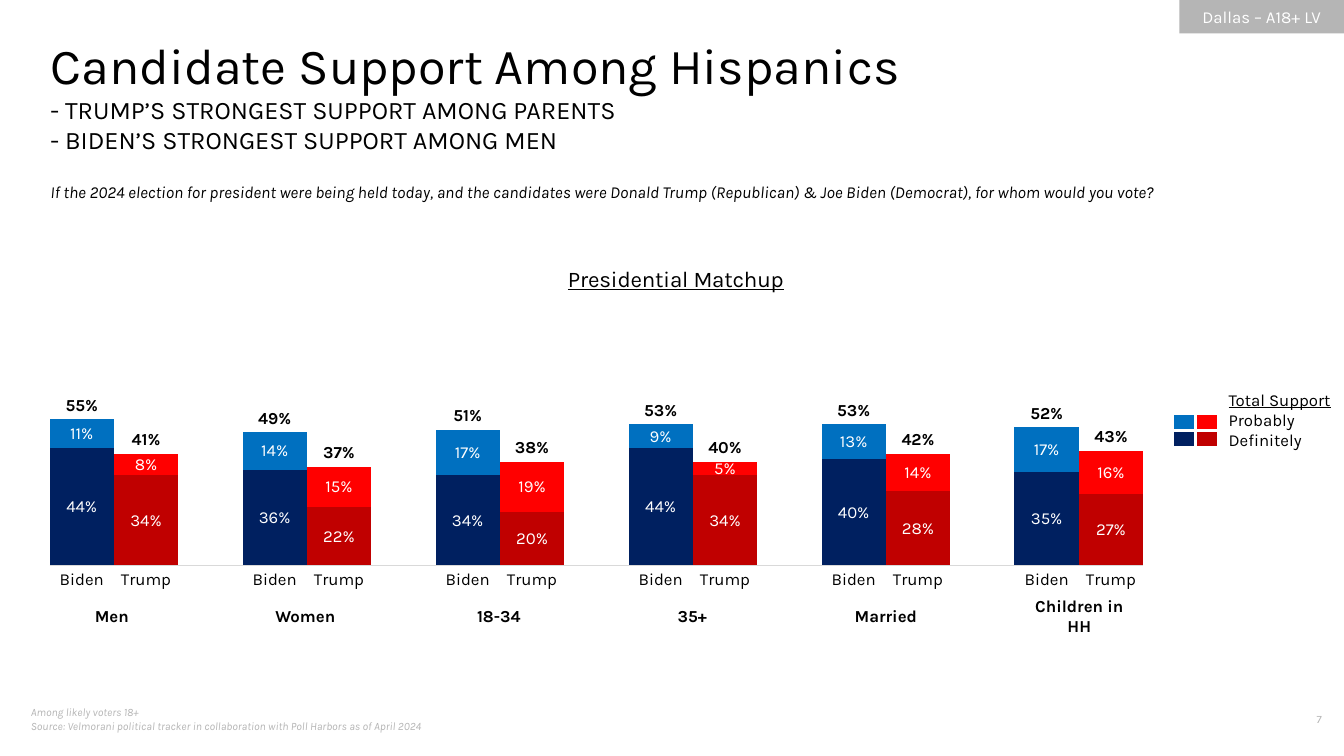
from lxml import etree
from pptx import Presentation
from pptx.chart.data import CategoryChartData
from pptx.dml.color import RGBColor
from pptx.enum.chart import XL_CHART_TYPE, XL_LABEL_POSITION, XL_TICK_MARK
from pptx.enum.shapes import MSO_SHAPE
from pptx.enum.text import MSO_ANCHOR, PP_ALIGN
from pptx.oxml import parse_xml
from pptx.oxml.ns import nsdecls, qn
from pptx.util import Pt

LEFT, CENTER, RIGHT = PP_ALIGN.LEFT, PP_ALIGN.CENTER, PP_ALIGN.RIGHT
TOP, MIDDLE = MSO_ANCHOR.TOP, MSO_ANCHOR.MIDDLE
STACKED, NO_TICK = XL_CHART_TYPE.COLUMN_STACKED, XL_TICK_MARK.NONE
LABEL_CENTER, LABEL_BASE = XL_LABEL_POSITION.CENTER, XL_LABEL_POSITION.INSIDE_BASE

FONT = "Karla"
COLORS = {
    "black": "000000", "white": "FFFFFF", "gray": "B5B5B5", "axis": "D9D9D9",
    "biden_definitely": "002060", "trump_definitely": "C00000",
    "biden_probably": "0070C0", "trump_probably": "FF0000",
}

AUDIENCE = "Dallas – A18+ LV"
HEADING = [
    ("Candidate Support Among Hispanics", {"size": 36}),
    ("- TRUMP’S STRONGEST SUPPORT AMONG PARENTS", {"size": 18}),
    ("- BIDEN’S STRONGEST SUPPORT AMONG MEN", {"size": 18}),
]
QUESTION = ("If the 2024 election for president were being held today, and the candidates were "
            "Donald Trump (Republican) & Joe Biden (Democrat), for whom would you vote?")
CHART_TITLE = "Presidential Matchup"
CANDIDATES = ("Biden", "Trump")
LEVELS = ("Definitely", "Probably", "Total Support")
# Group: (Biden, Trump) shares, each as definitely, probably, total
SUPPORT = {
    "Men": ((0.44, 0.11, 0.55), (0.34, 0.08, 0.41)),
    "Women": ((0.36, 0.14, 0.49), (0.22, 0.15, 0.37)),
    "18-34": ((0.34, 0.17, 0.51), (0.2, 0.19, 0.38)),
    "35+": ((0.44, 0.09, 0.53), (0.34, 0.05, 0.4)),
    "Married": ((0.4, 0.13, 0.53), (0.28, 0.14, 0.42)),
    "Children in HH": ((0.35, 0.17, 0.52), (0.27, 0.16, 0.43)),
}
FOOTNOTES = [
    "Among likely voters 18+",
    "Source: Velmorani political tracker in collaboration with Poll Harbors as of April 2024",
]
PAGE = "7"

BAR = 46.08
NO_TABLE_STYLE = "{2D5ABB26-0587-4C30-8999-92F81FD0307C}"


def rgb(name):
    return RGBColor.from_string(COLORS[name])


def style(font, color="black", size=12, **flags):
    values = {"name": FONT, "size": Pt(size), "bold": False, **flags}
    for attribute, value in values.items():
        setattr(font, attribute, value)
    font.color.rgb = rgb(color)


def write(frame, lines, align=LEFT, anchor=TOP, margin=None, wrap=True, **base):
    """Fill a text frame with (text, format) lines laid over a base format."""
    frame.word_wrap, frame.vertical_anchor = wrap, anchor
    if margin is not None:
        for side in ("left", "top", "right", "bottom"):
            setattr(frame, f"margin_{side}", Pt(margin))
    for index, (text, extra) in enumerate(lines):
        line = frame.paragraphs[0] if index == 0 else frame.add_paragraph()
        properties = line._p.get_or_add_pPr()
        properties.set("marL", "0")
        properties.set("indent", "0")
        etree.SubElement(properties, qn("a:buNone"))
        line.alignment, line.space_before = align, Pt(0)
        run = line.add_run()
        run.text = text
        style(run.font, **{**base, **extra})


def place(shape, left, top, width, height):
    shape.left, shape.top, shape.width, shape.height = map(Pt, (left, top, width, height))


def add_label(slide, box, lines, **fmt):
    write(slide.shapes.add_textbox(*map(Pt, box)).text_frame, lines, **fmt)


def add_plain_table(slide, rows, widths, left, top, row_height):
    table = slide.shapes.add_table(rows, len(widths), Pt(left), Pt(top),
                                   Pt(sum(widths)), Pt(rows * row_height)).table
    table.first_row = table.horz_banding = False
    table._tbl.tblPr.find(qn("a:tableStyleId")).text = NO_TABLE_STYLE
    for column, width in zip(table.columns, widths):
        column.width = Pt(width)
    return table


def set_layout(parent, x, y, w=None, h=None):
    """Pin a chart part by fractions of the chart's size."""
    old = parent.find(qn("c:layout"))
    if old is not None:
        parent.remove(old)
    values = {"xMode": "edge", "yMode": "edge", "x": x, "y": y, "w": w, "h": h}
    parts = "".join(f'<c:{key} val="{value}"/>' for key, value in values.items() if value is not None)
    target = '<c:layoutTarget val="inner"/>' if w else ""
    layout = parse_xml(f'<c:layout {nsdecls("c")}><c:manualLayout>{target}{parts}'
                       '</c:manualLayout></c:layout>')
    text = parent.find(qn("c:tx"))
    if text is not None:
        text.addnext(layout)
    else:
        parent.insert(0, layout)


def add_support_chart(slide):
    bars = []
    for pair in SUPPORT.values():
        bars += [*zip(CANDIDATES, pair), ("", (None,) * len(LEVELS))]
    bars.pop()
    data = CategoryChartData(number_format="0%")
    data.categories = [candidate for candidate, _ in bars]
    for index, level in enumerate(LEVELS):
        data.add_series(level, [shares[index] for _, shares in bars])
    chart = slide.shapes.add_chart(STACKED, Pt(24.5), Pt(173.5), Pt(911.5), Pt(257.8), data).chart
    style(chart.font, size=10)
    chart.has_legend = False

    chart.has_title = True
    title = chart.chart_title
    title.include_in_layout = False
    run = title.text_frame.paragraphs[0].add_run()
    run.text = CHART_TITLE
    style(run.font, size=16, underline=True)
    set_layout(title._element, 0.415, 0.05)
    set_layout(chart._chartSpace.chart.plotArea, 0.012, 0.157, 0.857, 0.737)

    shares_axis, names_axis = chart.value_axis, chart.category_axis
    shares_axis.minimum_scale, shares_axis.maximum_scale = 0, 1
    shares_axis.has_major_gridlines = shares_axis.visible = False
    names_axis.major_tick_mark = names_axis.minor_tick_mark = NO_TICK
    names_axis.format.line.color.rgb = rgb("axis")
    names_axis.format.line.width = Pt(0.75)
    style(names_axis.tick_labels.font)

    plot = chart.plots[0]
    plot.gap_width, plot.overlap, plot.vary_by_categories = 0, 100, False
    for level, series in zip(LEVELS, plot.series):
        total = level == LEVELS[-1]
        series.format.fill.background()
        labels = series.data_labels
        labels.show_value, labels.number_format = True, "0%"
        labels.number_format_is_linked = False
        labels.position = LABEL_BASE if total else LABEL_CENTER
        style(labels.font, color="black" if total else "white", bold=total)
        if total:
            continue
        for index, (candidate, _) in enumerate(bars):
            if candidate:
                fill = series.points[index].format.fill
                fill.solid()
                fill.fore_color.rgb = rgb(f"{candidate}_{level}".lower())


def add_legend(slide):
    names = [(level, {"underline": level == LEVELS[-1]}) for level in reversed(LEVELS)]
    add_label(slide, (870.5, 270, 90, 60), names, anchor=MIDDLE, wrap=False)
    swatches = add_plain_table(slide, 2, [16.6, 16.6], 837.4, 295.2, 12.24)
    for row, level in enumerate(("probably", "definitely")):
        for column, candidate in enumerate(CANDIDATES):
            cell = swatches.cell(row, column)
            for side in ("left", "top", "right", "bottom"):
                setattr(cell, f"margin_{side}", 0)
            etree.SubElement(cell.text_frame.paragraphs[0]._p, qn("a:endParaRPr"), sz="600")
            for edge in ("lnL", "lnR", "lnT", "lnB"):
                border = etree.SubElement(cell._tc.get_or_add_tcPr(), qn(f"a:{edge}"), w=str(Pt(3)))
                paint = etree.SubElement(border, qn("a:solidFill"))
                etree.SubElement(paint, qn("a:srgbClr"), val=COLORS["white"])
            cell.fill.solid()
            cell.fill.fore_color.rgb = rgb(f"{candidate.lower()}_{level}")


def add_group_names(slide):
    widths = ([2 * BAR, BAR] * len(SUPPORT))[:-1]
    table = add_plain_table(slide, 1, widths, 33.8, 422.6, 29.5)
    for column in range(len(widths)):
        table.cell(0, column).fill.background()
    for index, group in enumerate(SUPPORT):
        cell = table.cell(0, 2 * index)
        cell.vertical_anchor = MIDDLE
        write(cell.text_frame, [(group, {})], align=CENTER, bold=True)


def main():
    deck = Presentation()
    deck.slide_width, deck.slide_height = Pt(960), Pt(540)
    slide = deck.slides.add_slide(deck.slide_layouts[1])

    tag = slide.shapes.add_shape(MSO_SHAPE.RECTANGLE, Pt(842.4), 0, Pt(117.6), Pt(23.8))
    tag.shadow.inherit = False
    tag.fill.solid()
    tag.fill.fore_color.rgb = rgb("gray")
    tag.line.fill.background()
    write(tag.text_frame, [(AUDIENCE, {})], align=CENTER, anchor=MIDDLE, color="white")

    heading, question = slide.placeholders
    place(heading, 36, 24, 864, 87)
    write(heading.text_frame, HEADING, anchor=MIDDLE, margin=0)
    place(question, 36, 129.6, 864, 28.8)
    write(question.text_frame, [(QUESTION, {})], margin=0, italic=True)

    add_support_chart(slide)
    add_legend(slide)
    add_group_names(slide)
    add_label(slide, (15, 500.4, 368, 28.8), [(note, {}) for note in FOOTNOTES],
              size=8, color="gray", italic=True)
    add_label(slide, (887.8, 505.4, 63.4, 19.4), [(PAGE, {})], align=RIGHT, size=8, color="gray")
    deck.save("out.pptx")


if __name__ == "__main__":
    main()
